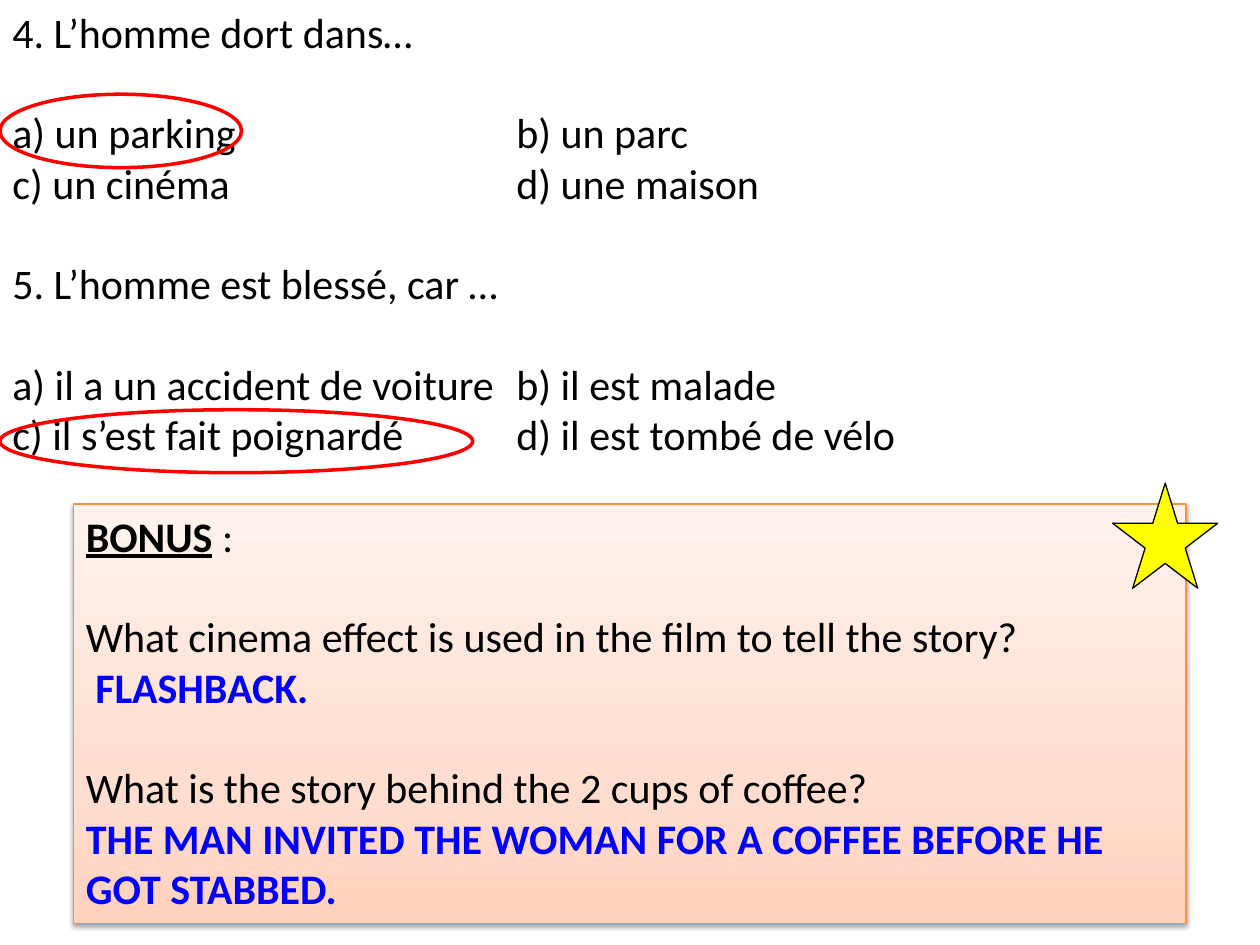
"""Build a French film quiz slide with circled answers and a bonus box."""
from copy import deepcopy

from lxml import etree
from pptx import Presentation
from pptx.dml.color import RGBColor
from pptx.enum.shapes import MSO_SHAPE
from pptx.enum.text import MSO_ANCHOR, PP_ALIGN
from pptx.oxml.ns import qn
from pptx.util import Cm, Pt

RECTANGLE, STAR, OVAL = MSO_SHAPE.RECTANGLE, MSO_SHAPE.STAR_5_POINT, MSO_SHAPE.OVAL
LEFT, TOP = PP_ALIGN.LEFT, MSO_ANCHOR.TOP
BLACK = RGBColor(0x00, 0x00, 0x00)
BLUE = RGBColor(0x00, 0x00, 0xFF)
RED = RGBColor(0xFF, 0x00, 0x00)
YELLOW = RGBColor(0xFF, 0xFF, 0x00)
ORANGE = RGBColor(0xF6, 0x92, 0x40)
PEACH_STOPS = [
    (0, RGBColor(0xFF, 0xD2, 0xBD)),
    (0.35, RGBColor(0xFF, 0xDE, 0xD0)),
    (1, RGBColor(0xFF, 0xF2, 0xED)),
]
FONT, SIZE, LINE_GAP = "Calibri", Pt(24), Pt(28.7)
TAB_STEP, TAB_COUNT = Cm(2.54), 4

QUESTIONS = [
    ("4. L’homme dort dans…", [
        "a) un parking\t\t\tb) un parc",
        "c) un cinéma\t\t\td) une maison",
    ]),
    ("5. L’homme est blessé, car …", [
        "a) il a un accident de voiture\tb) il est malade",
        "c) il s’est fait poignardé\td) il est tombé de vélo",
    ]),
]
BONUS = [
    ("What cinema effect is used in the film to tell the story?", " FLASHBACK."),
    ("What is the story behind the 2 cups of coffee?",
     "THE MAN INVITED THE WOMAN FOR A COFFEE BEFORE HE GOT STABBED."),
]
CIRCLED_ANSWERS = [(0, 1.9, 4.87, 1.48), (0, 8.26, 9.53, 1.27)]


def add_text(paragraph, text, color=BLACK, bold=False, underline=False, gap=False):
    run = paragraph.add_run()
    run.text = text
    run.font.name, run.font.size = FONT, SIZE
    run.font.bold, run.font.underline = bold, underline
    run.font.color.rgb = color
    paragraph.alignment = LEFT
    if gap:
        paragraph.space_before = LINE_GAP


def add_tab_stops(paragraph):
    tabs = etree.SubElement(paragraph._p.get_or_add_pPr(), qn("a:tabLst"))
    for number in range(1, TAB_COUNT + 1):
        etree.SubElement(tabs, qn("a:tab"), pos=str(number * TAB_STEP), algn="l")


def add_outlined(slide, kind, box, line_color, line_width, fill_color=None):
    shape = slide.shapes.add_shape(kind, *map(Cm, box))
    shape.shadow.inherit = False
    shape.line.color.rgb = line_color
    shape.line.width = Pt(line_width)
    if fill_color is None:
        shape.fill.background()
    else:
        shape.fill.solid()
        shape.fill.fore_color.rgb = fill_color
    return shape


def fill_peach(shape):
    shape.fill.gradient()
    shape.fill.gradient_angle = 90
    stop_list = shape._element.spPr.find(qn("a:gradFill")).find(qn("a:gsLst"))
    stop_list.insert(1, deepcopy(stop_list[0]))
    for stop, (position, color) in zip(shape.fill.gradient_stops, PEACH_STOPS):
        stop.position = position
        stop.color.rgb = color


def add_shadow(shape):
    effects = shape._element.spPr.find(qn("a:effectLst"))
    shadow = etree.SubElement(
        effects, qn("a:outerShdw"), blurRad=str(Pt(3.1)), dist=str(Pt(1.6)),
        dir="5400000", rotWithShape="0")
    color = etree.SubElement(shadow, qn("a:srgbClr"), val=str(BLACK))
    etree.SubElement(color, qn("a:alpha"), val="38000")


def add_questions(slide):
    frame = slide.shapes.add_textbox(0, 0, Cm(20.96), Cm(9.5)).text_frame
    frame.word_wrap = True
    for number, (question, answers) in enumerate(QUESTIONS):
        paragraph = frame.add_paragraph() if number else frame.paragraphs[0]
        add_text(paragraph, question, gap=number > 0)
        for row, answer in enumerate(answers):
            paragraph = frame.add_paragraph()
            add_text(paragraph, answer, gap=row == 0)
            add_tab_stops(paragraph)


def add_bonus(slide):
    box = add_outlined(slide, RECTANGLE, (1.48, 10.16, 22.43, 8.46), ORANGE, 0.75)
    fill_peach(box)
    add_shadow(box)
    frame = box.text_frame
    frame.word_wrap = True
    frame.vertical_anchor = TOP
    heading = frame.paragraphs[0]
    add_text(heading, "BONUS", bold=True, underline=True)
    add_text(heading, " :")
    for question, answer in BONUS:
        add_text(frame.add_paragraph(), question, gap=True)
        add_text(frame.add_paragraph(), answer, color=BLUE, bold=True)


def main():
    presentation = Presentation()
    presentation.slide_width, presentation.slide_height = Cm(25.4), Cm(19.05)
    slide = presentation.slides.add_slide(presentation.slide_layouts[6])
    add_questions(slide)
    add_bonus(slide)
    add_outlined(slide, STAR, (22.43, 9.74, 2.12, 2.12), BLACK, 0.75, YELLOW)
    for box in CIRCLED_ANSWERS:
        add_outlined(slide, OVAL, box, RED, 2)
    presentation.save("out.pptx")


if __name__ == "__main__":
    main()
